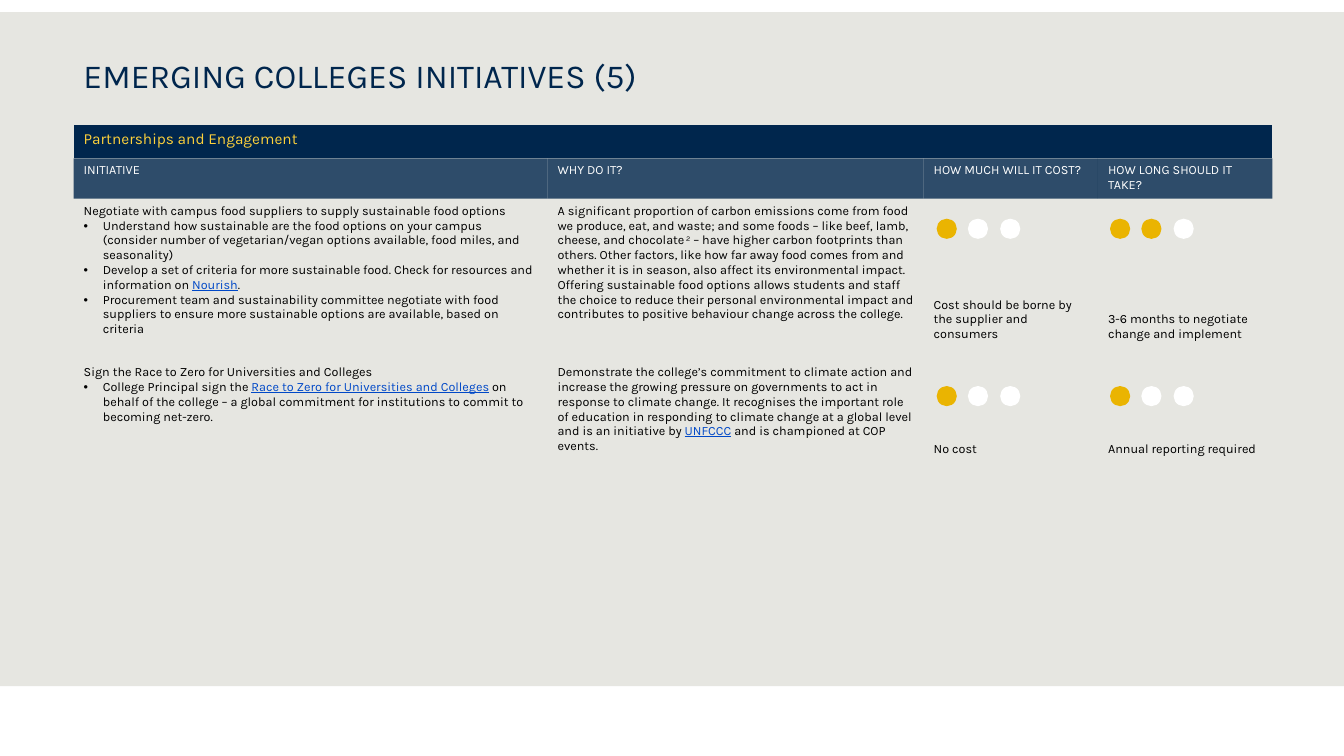
from lxml import etree
from pptx import Presentation
from pptx import util as u
from pptx.dml.color import RGBColor
from pptx.enum import shapes, text
from pptx.oxml.ns import qn

PX = 9144
NAVY, GOLD, WHITE, BLACK = "00264D", "EAB401", "FFFFFF", "000000"
PLAIN_STYLE = "{2D5ABB26-0587-4C30-8999-92F81FD0307C}"
BASE = {"name": "Karla", "size": u.Pt(9), "color": BLACK}
HEAD = {**BASE, "color": WHITE}
BAND = {**BASE, "size": u.Pt(11), "color": "FED13B"}
TITLE = {**BASE, "size": u.Pt(24), "color": NAVY}
LINK = {"color": "0048C7", "underline": True}
RAISED = {"raise": "30000"}

COLS = [470, 373, 173, 173]
ROWS = [33, 40, 160, 101]
HEADS = ["INITIATIVE", "WHY DO IT?", "HOW MUCH WILL IT COST?",
         "HOW LONG SHOULD IT TAKE?"]

FOOD = [
    ["Negotiate with campus food suppliers to supply sustainable food options"],
    ["•", "Understand how sustainable are the food options on your campus "
          "(consider number of vegetarian/vegan options available, food miles, "
          "and seasonality)"],
    ["•", "Develop a set of criteria for more sustainable food. Check for "
          "resources and information on ", ("Nourish", LINK), "."],
    ["•", "Procurement team and sustainability committee negotiate with food "
          "suppliers to ensure more sustainable options are available, based "
          "on criteria"],
]
FOOD_WHY = [
    ["A significant proportion of carbon emissions come from food we produce, "
     "eat, and waste; and some foods – like beef, lamb, cheese, and chocolate",
     (" 2", RAISED),
     " – have higher carbon footprints than others. Other factors, like how far "
     "away food comes from and whether it is in season, also affect its "
     "environmental impact."],
    ["Offering sustainable food options allows students and staff the choice to "
     "reduce their personal environmental impact and contributes to positive "
     "behaviour change across the college."],
]
RACE = [
    ["Sign the Race to Zero for Universities and Colleges"],
    ["•", "College Principal sign the ",
     ("Race to Zero for Universities and Colleges", LINK),
     " on behalf of the college – a global commitment for institutions to "
     "commit to becoming net-zero."],
]
RACE_WHY = [
    ["Demonstrate the college’s commitment to climate action and increase the "
     "growing pressure on governments to act in response to climate change. It "
     "recognises the important role of education in responding to climate "
     "change at a global level and is an initiative by ", ("UNFCCC", LINK),
     " and is championed at COP events."],
]
BODY = [
    [FOOD, FOOD_WHY, [["Cost should be borne by the supplier and consumers"]],
     [["3-6 months to negotiate change and implement"]]],
    [RACE, RACE_WHY, [["No cost"]], [["Annual reporting required"]]],
]
SCORES = [(217, [1, 2]), (383, [1, 1])]


def px(*vals):
    return [u.Emu(v * PX) for v in vals]


def tint(target, code):
    target.rgb = RGBColor.from_string(code)


def paint(fill, code):
    fill.solid()
    tint(fill.fore_color, code)


def style(run, form):
    for key, val in form.items():
        if key == "color":
            tint(run.font.color, val)
        elif key == "raise":
            run._r.get_or_add_rPr().set("baseline", val)
        else:
            setattr(run.font, key, val)


def bullet(para):
    props = para._p.get_or_add_pPr()
    props.set("marL", str(19 * PX))
    props.set("indent", str(-19 * PX))
    etree.SubElement(props, qn("a:buFont")).set("typeface", "Arial")
    etree.SubElement(props, qn("a:buChar")).set("char", "•")


def write(frame, paras, form):
    frame.word_wrap = True
    for num, runs in enumerate(paras):
        para = frame.add_paragraph() if num else frame.paragraphs[0]
        if runs[0] == "•":
            bullet(para)
            runs = runs[1:]
        for item in runs:
            words, extra = (item, {}) if isinstance(item, str) else item
            run = para.add_run()
            run.text = words
            style(run, {**form, **extra})


def shape(slide, kind, box, code):
    item = slide.shapes.add_shape(kind, *px(*box))
    item.shadow.inherit = False
    paint(item.fill, code)
    item.line.fill.background()


def title(slide, words):
    frame = slide.shapes.add_textbox(*px(73, 47, 1187, 57)).text_frame
    frame.margin_top = px(7)[0]
    write(frame, [[words]], TITLE)


def fade(cell, part):
    color = cell.fill._xPr.find(".//" + qn("a:srgbClr"))
    etree.SubElement(color, qn("a:alpha")).set("val", str(part * 1000))


def table(slide):
    frame = slide.shapes.add_table(len(ROWS), len(COLS),
                                   *px(73, 124, sum(COLS), sum(ROWS)))
    grid = frame.table
    grid.horz_banding = grid.first_row = False
    grid._tbl.tblPr.find(qn("a:tableStyleId")).text = PLAIN_STYLE
    for col, wide in zip(grid.columns, px(*COLS)):
        col.width = wide
    for row, high in zip(grid.rows, px(*ROWS)):
        row.height = high
    band = grid.cell(0, 0)
    band.merge(grid.cell(0, len(COLS) - 1))
    paint(band.fill, NAVY)
    write(band.text_frame, [["Partnerships and Engagement"]], BAND)
    for col, words in enumerate(HEADS):
        cell = grid.cell(1, col)
        paint(cell.fill, NAVY)
        fade(cell, 80)
        write(cell.text_frame, [[words]], HEAD)
    for row, items in enumerate(BODY, 2):
        for col, paras in enumerate(items):
            cell = grid.cell(row, col)
            cell.fill.background()
            write(cell.text_frame, paras, BASE)
            if col > 1:
                cell.vertical_anchor = text.MSO_ANCHOR.BOTTOM
            if row == 2:
                cell.margin_bottom = px(18)[0]


def dots(slide, left, top, score):
    for num in range(3):
        box = (left + num * 63 // 2, top, 20, 20)
        shape(slide, shapes.MSO_SHAPE.OVAL, box, GOLD if num < score else WHITE)


def main():
    deck = Presentation()
    deck.slide_width, deck.slide_height = px(1333, 750)
    slide = deck.slides.add_slide(deck.slide_layouts[6])
    shape(slide, shapes.MSO_SHAPE.RECTANGLE, (0, 12, 1333, 669), "E6E6E1")
    title(slide, "EMERGING COLLEGES INITIATIVES (5)")
    table(slide)
    shape(slide, shapes.MSO_SHAPE.RECTANGLE, (0, 681, 1333, 69), WHITE)
    for top, scores in SCORES:
        for col, score in enumerate(scores):
            dots(slide, 929 + col * 172, top, score)
    deck.save("out.pptx")


if __name__ == "__main__":
    main()
